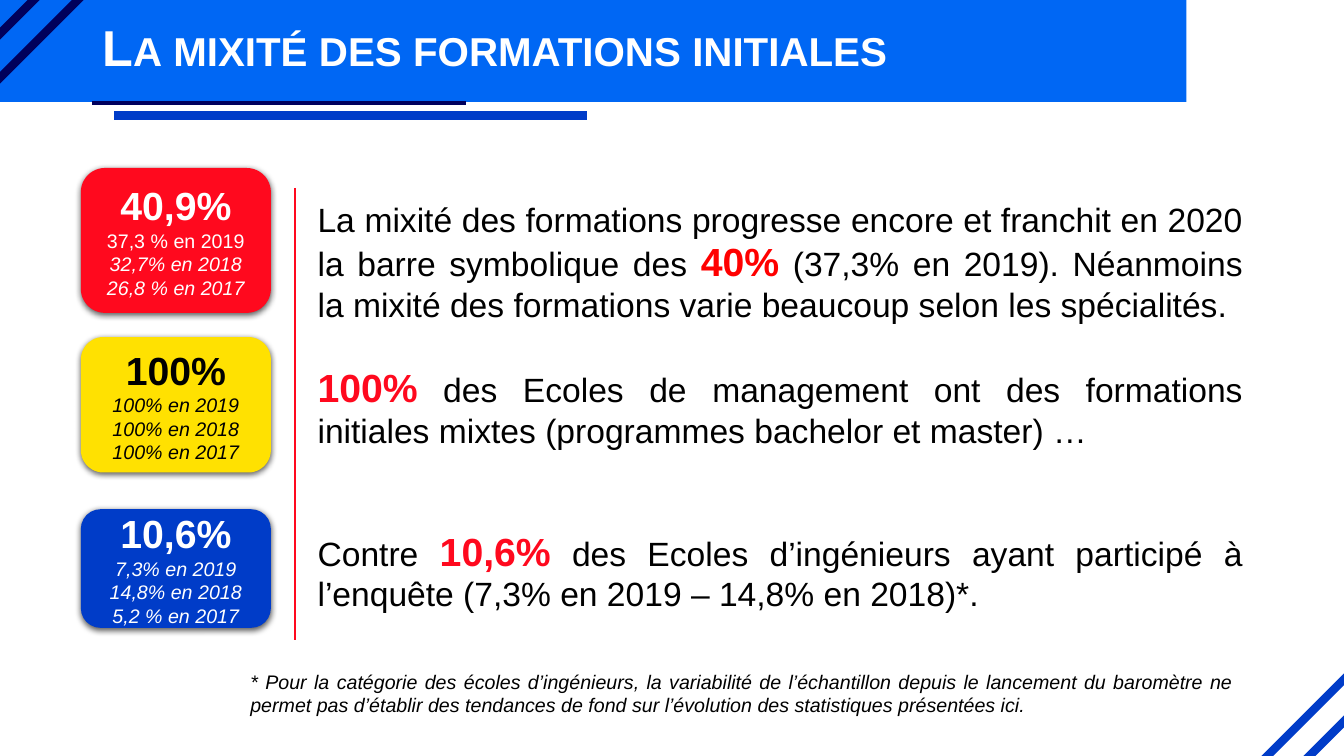
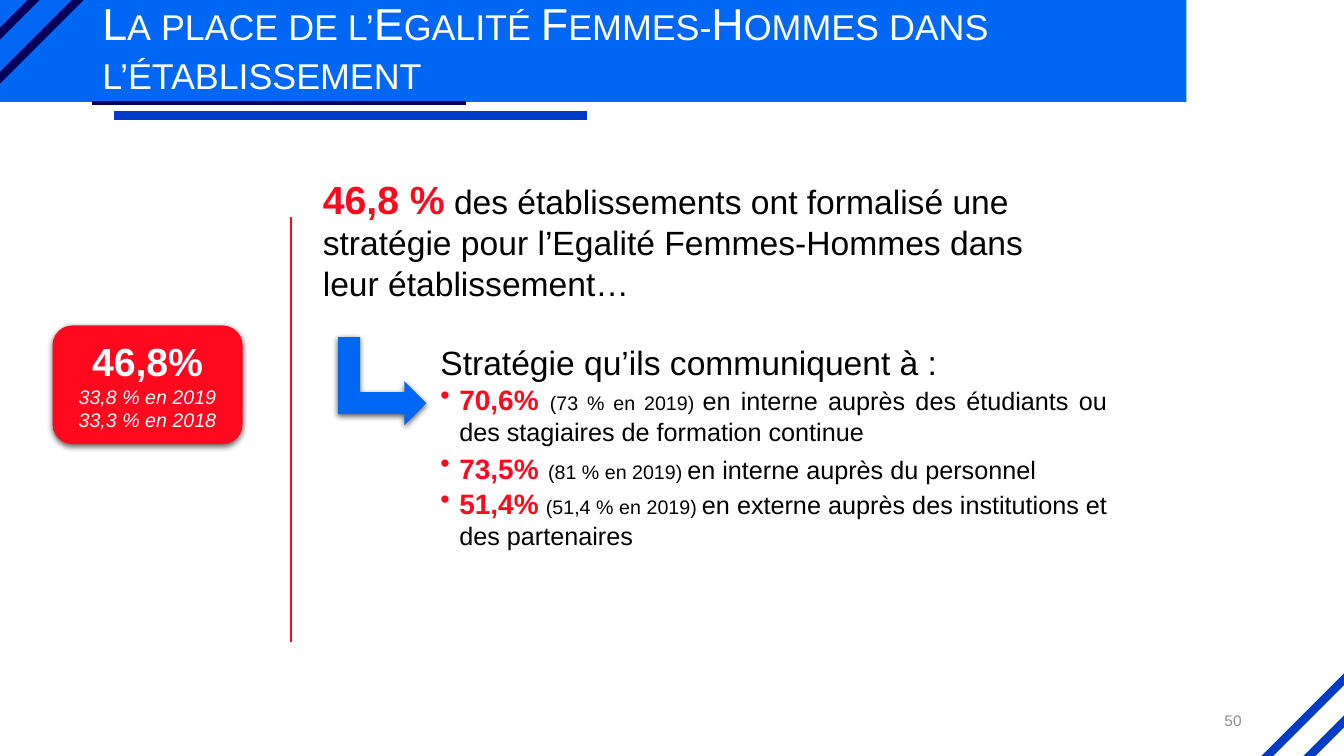
from dataclasses import dataclass
from typing import NamedTuple, Sequence

from lxml import etree
from pptx import Presentation
from pptx.dml.color import RGBColor
from pptx.enum.shapes import MSO_CONNECTOR as Connector, MSO_SHAPE as Preset
from pptx.enum.text import MSO_ANCHOR as Anchor, PP_ALIGN as Align
from pptx.oxml.ns import qn
from pptx.shapes.autoshape import Shape
from pptx.slide import Slide
from pptx.util import Emu, Pt

EMU_PER_PX = 9525


def px(length: int) -> Emu:
    return Emu(length * EMU_PER_PX)


@dataclass(frozen=True)
class Theme:
    font: str = "Arial"
    band: str = "0067F4"
    blue: str = "003CC8"
    navy: str = "00005C"
    red: str = "FF091E"
    bright_red: str = "FF0000"
    yellow: str = "FFE101"
    black: str = "000000"
    white: str = "FFFFFF"
    grey: str = "8C8C8C"
    title: int = 36
    long_title: int = 32
    figure: int = 28
    body: int = 24
    bullet_figure: int = 20
    bullet: int = 18
    small: int = 14
    gap: int = 12
    page_number: int = 11


THEME = Theme()


class Box(NamedTuple):
    left: int
    top: int
    width: int
    height: int


class Span(NamedTuple):
    text: str
    size: int = THEME.body
    color: str = THEME.black
    bold: bool = False
    italic: bool = False
    small_caps: bool = False


class Para(NamedTuple):
    spans: Sequence[Span]
    align: Align = Align.JUSTIFY
    spacing: float = 1.0
    bullet: bool = False


class Rule(NamedTuple):
    start: tuple[int, int]
    end: tuple[int, int]
    color: str
    weight: float


class Card(NamedTuple):
    left: int
    top: int
    height: int
    fill: str
    ink: str
    figure: str
    history: Sequence[str]
    upright_rows: int = 0


CARD_WIDTH = 181
BULLET_INDENT = 18
BAND = Box(0, 0, 1130, 97)
TITLE_BOX = Box(88, 1, 1104, 94)
FRAME_RULES = (
    Rule((1233, 734), (1294, 673), THEME.blue, 6),
    Rule((1192, 735), (1297, 630), THEME.blue, 6),
    Rule((-9, 41), (41, -9), THEME.navy, 6),
    Rule((-9, 83), (83, -9), THEME.navy, 6),
    Rule((109, 110), (559, 110), THEME.blue, 6),
    Rule((88, 98), (444, 98), THEME.navy, 3),
)


def add_line(slide: Slide, rule: Rule) -> None:
    line = slide.shapes.add_connector(
        Connector.STRAIGHT, *map(px, rule.start), *map(px, rule.end))
    line.line.color.rgb = RGBColor.from_string(rule.color)
    line.line.width = Pt(rule.weight)
    etree.SubElement(line._element.spPr, qn("a:effectLst"))


def add_filled(slide: Slide, preset: Preset, box: Box, color: str) -> Shape:
    shape = slide.shapes.add_shape(preset, *map(px, box))
    shape.fill.solid()
    shape.fill.fore_color.rgb = RGBColor.from_string(color)
    shape.line.fill.background()
    shape.shadow.inherit = False
    return shape


def drop_shadow(shape: Shape) -> None:
    effects = shape._element.spPr.find(qn("a:effectLst"))
    shadow = etree.SubElement(
        effects, qn("a:outerShdw"), blurRad=str(Pt(4.5)), dist=str(Pt(1.5)),
        dir="5400000", algn="ctr", rotWithShape="0")
    color = etree.SubElement(shadow, qn("a:srgbClr"), val=THEME.black)
    etree.SubElement(color, qn("a:alpha"), val="63000")


def write(shape: Shape, paras: Sequence[Para], anchor: Anchor = Anchor.TOP) -> None:
    frame = shape.text_frame
    frame.word_wrap = True
    frame.vertical_anchor = anchor
    for index, para in enumerate(paras):
        paragraph = frame.add_paragraph() if index else frame.paragraphs[0]
        paragraph.alignment = para.align
        paragraph.line_spacing = para.spacing
        if para.bullet:
            properties = paragraph._p.get_or_add_pPr()
            properties.set("marL", str(px(BULLET_INDENT)))
            properties.set("indent", str(px(-BULLET_INDENT)))
            etree.SubElement(properties, qn("a:buChar"), char="•")
        for span in para.spans:
            run = paragraph.add_run()
            run.text = span.text
            font = run.font
            font.name, font.size = THEME.font, Pt(span.size)
            font.bold, font.italic = span.bold, span.italic
            font.color.rgb = RGBColor.from_string(span.color)
            if span.small_caps:
                run._r.get_or_add_rPr().set("cap", "small")


def add_text(slide: Slide, box: Box, paras: Sequence[Para],
             anchor: Anchor = Anchor.TOP) -> None:
    write(slide.shapes.add_textbox(*map(px, box)), paras, anchor)


def add_card(slide: Slide, card: Card) -> None:
    """Draw a rounded card: a large figure above the earlier years."""
    box = Box(card.left, card.top, CARD_WIDTH, card.height)
    shape = add_filled(slide, Preset.ROUNDED_RECTANGLE, box, card.fill)
    drop_shadow(shape)
    spans = [Span(card.figure, THEME.figure, card.ink, bold=True)]
    spans += [Span(text, THEME.small, card.ink, italic=row >= card.upright_rows)
              for row, text in enumerate(card.history)]
    write(shape, [Para([span], Align.CENTER) for span in spans], Anchor.MIDDLE)


def add_framed_slide(deck: Presentation, title: Span) -> Slide:
    """Add a slide with the shared band, corner stripes and title."""
    slide = deck.slides.add_slide(deck.slide_layouts[6])
    add_filled(slide, Preset.RECTANGLE, BAND, THEME.band)
    for rule in FRAME_RULES:
        add_line(slide, rule)
    add_text(slide, TITLE_BOX, [Para([title], Align.LEFT, 0.9)], Anchor.MIDDLE)
    return slide


def key_figure(text: str, color: str = THEME.red) -> Span:
    return Span(text, THEME.figure, color, bold=True)


def audience(share: str, gap: Span, earlier: str, target: str) -> Para:
    return Para([
        Span(share, THEME.bullet_figure, THEME.red, bold=True),
        gap,
        Span(earlier, THEME.small),
        Span(" ", THEME.gap),
        Span(target, THEME.bullet),
    ], bullet=True)


def add_training_slide(deck: Presentation) -> None:
    slide = add_framed_slide(deck, Span(
        "La mixité des formations initiales", THEME.title, THEME.white,
        bold=True, small_caps=True))
    cards = (
        Card(77, 160, 138, THEME.red, THEME.white, "40,9%",
             ("37,3 % en 2019", "32,7% en 2018", "26,8 % en 2017"), 1),
        Card(77, 321, 129, THEME.yellow, THEME.black, "100%",
             ("100% en 2019", "100% en 2018", "100% en 2017")),
        Card(77, 485, 113, THEME.blue, THEME.white, "10,6%",
             ("7,3% en 2019", "14,8% en 2018", "5,2 % en 2017")),
    )
    for card in cards:
        add_card(slide, card)
    add_line(slide, Rule((281, 179), (281, 610), THEME.red, 1.5))
    comments = (
        (187, 120, (
            Span("La mixité des formations progresse encore et franchit en 2020 "
                 "la barre symbolique des "),
            key_figure("40%", THEME.bright_red),
            Span(" (37,3% en 2019). Néanmoins la mixité des formations varie "
                 "beaucoup selon les spécialités."))),
        (344, 84, (
            key_figure("100%"),
            Span(" des Ecoles de management ont des formations initiales mixtes "
                 "(programmes bachelor et master) …"))),
        (500, 84, (
            Span("Contre "),
            key_figure("10,6%"),
            Span(" des Ecoles d’ingénieurs ayant participé à l’enquête "
                 "(7,3% en 2019 – 14,8% en 2018)*."))),
    )
    for top, height, spans in comments:
        add_text(slide, Box(293, top, 900, height), [Para(spans, spacing=0.97)])
    footnote = Span(
        "* Pour la catégorie des écoles d’ingénieurs, la variabilité de "
        "l’échantillon depuis le lancement du baromètre ne permet pas d’établir "
        "des tendances de fond sur l’évolution des statistiques présentées ici.",
        THEME.small, italic=True)
    add_text(slide, Box(229, 633, 955, 55), [Para([footnote])])


def add_strategy_slide(deck: Presentation) -> None:
    slide = add_framed_slide(deck, Span(
        "La place de l’Egalité Femmes-Hommes dans l’établissement",
        THEME.long_title, THEME.white, small_caps=True))
    add_text(slide, Box(298, 162, 722, 132), [Para((
        key_figure("46,8 %"),
        Span(" des établissements ont formalisé une stratégie pour l’Egalité "
             "Femmes-Hommes dans leur établissement…")), Align.LEFT)])
    add_card(slide, Card(50, 310, 113, THEME.red, THEME.white, "46,8%",
                         ("33,8 % en 2019", "33,3 % en 2018")))
    add_line(slide, Rule((277, 207), (277, 611), THEME.red, 1.5))
    arrow = add_filled(slide, Preset.BENT_UP_ARROW, Box(322, 321, 84, 84), THEME.band)
    arrow.rotation = 90
    drop_shadow(arrow)
    add_text(slide, Box(410, 321, 654, 210), [
        Para([Span("Stratégie qu’ils communiquent à :")]),
        audience("70,6%", Span(" ", THEME.bullet_figure, bold=True), "(73 % en 2019)",
                 "en interne auprès des étudiants ou des stagiaires de "
                 "formation continue"),
        audience("73,5%", Span(" ", THEME.body), "(81 % en 2019)",
                 "en interne auprès du personnel"),
        audience("51,4%", Span(" ", THEME.bullet), "(51,4 % en 2019)",
                 "en externe auprès des institutions et des partenaires"),
    ])
    number = Span("50", THEME.page_number, THEME.grey)
    add_text(slide, Box(904, 667, 288, 38), [Para([number], Align.RIGHT)], Anchor.MIDDLE)


def main() -> None:
    deck = Presentation()
    deck.slide_width, deck.slide_height = px(1280), px(720)
    add_training_slide(deck)
    add_strategy_slide(deck)
    deck.save("out.pptx")


if __name__ == "__main__":
    main()
